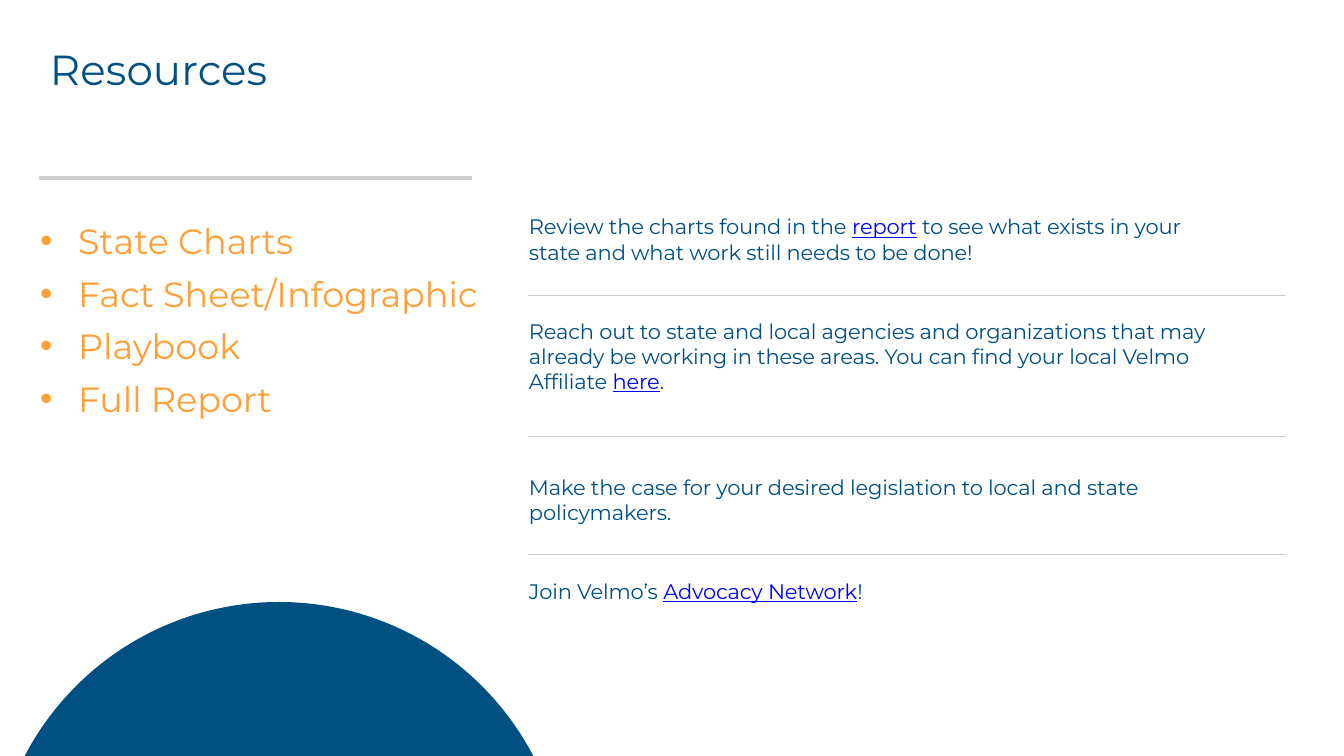
from dataclasses import dataclass
from math import acos, cos, sin

from lxml import etree
from pptx import Presentation
from pptx.dml.color import RGBColor
from pptx.enum.shapes import MSO_CONNECTOR
from pptx.enum.text import MSO_ANCHOR
from pptx.oxml.ns import qn
from pptx.util import Pt

STRAIGHT = MSO_CONNECTOR.STRAIGHT
TOP = MSO_ANCHOR.TOP

TITLE = "Resources"
MATERIALS = ["State Charts", "Fact Sheet/Infographic", "Playbook", "Full Report"]
ACTIONS = [
    (0, [("Review the charts found in the ", False), ("report", True),
         (" to see what exists in your state and what work still needs to be done!", False)]),
    (38.5, [("Reach out to state and local agencies and organizations that may already "
             "be working in these areas. You can find your local Velmo Affiliate ", False),
            ("here", True), (".", False)]),
    (57.5, [("Make the case for your desired legislation to local and state policymakers.", False)]),
    (38.5, [("Join Velmo’s ", False), ("Advocacy Network", True), ("!", False)]),
]
RULES = [(39, 178, 433, 2.25)] + [(528, y, 758, 0.5) for y in (295, 436, 554)]
DOME = {"center": 279, "top": 602, "radius": 287}
DOME_STEPS = 90
WIDTH, HEIGHT = 1344, 756
EMU_PER_PX = 914400 / 100.8


@dataclass(frozen=True)
class Theme:
    font: str = "Montserrat"
    navy: str = "005082"
    orange: str = "FF9F37"
    link: str = "0000FF"
    gray: str = "D0CECE"
    title: int = 30
    materials: int = 25
    body: int = 15


THEME = Theme()


def px(length):
    return round(length * EMU_PER_PX)


def color(value):
    return RGBColor.from_string(value)


def add_bullet(para, indent):
    properties = para._p.get_or_add_pPr()
    properties.set("marL", str(px(indent)))
    properties.set("indent", str(-px(indent - 1)))
    bullet_font = etree.SubElement(properties, qn("a:buFont"))
    bullet_font.set("typeface", "Arial")
    bullet = etree.SubElement(properties, qn("a:buChar"))
    bullet.set("char", "•")


def add_text(page, area, paragraphs, *, size, ink, leading=None, tracking=0, bullet_indent=0):
    box = page.shapes.add_textbox(*map(px, area))
    frame = box.text_frame
    frame.word_wrap = True
    frame.vertical_anchor = TOP
    frame.margin_left = frame.margin_right = frame.margin_top = frame.margin_bottom = 0
    for index, (gap, spans) in enumerate(paragraphs):
        para = frame.add_paragraph() if index else frame.paragraphs[0]
        if bullet_indent:
            add_bullet(para, bullet_indent)
        if gap:
            para.space_before = Pt(gap)
        if leading:
            para.line_spacing = Pt(leading)
        for text, linked in spans:
            span = para.add_run()
            span.text = text
            span.font.name = THEME.font
            span.font.size = Pt(size)
            span.font.color.rgb = color(THEME.link if linked else ink)
            span.font.underline = linked
            span._r.get_or_add_rPr().set("spc", str(tracking))


def add_rule(page, left, y, width, weight):
    rule = page.shapes.add_connector(STRAIGHT, px(left), px(y), px(left + width), px(y))
    rule.line.color.rgb = color(THEME.gray)
    rule.line.width = Pt(weight)
    etree.SubElement(rule._element.spPr, qn("a:effectLst"))


def add_dome(page, center, top, radius):
    reach = acos((top + radius - HEIGHT) / radius)
    angles = [reach * (2 * step / DOME_STEPS - 1) for step in range(DOME_STEPS + 1)]
    points = [(px(center + radius * sin(angle)), px(top + radius * (1 - cos(angle))))
              for angle in angles]
    builder = page.shapes.build_freeform(*points[0], scale=1.0)
    builder.add_line_segments(points[1:], close=True)
    dome = builder.convert_to_shape()
    dome.fill.solid()
    dome.fill.fore_color.rgb = color(THEME.navy)
    dome.line.fill.background()
    dome.shadow.inherit = False


def main():
    deck = Presentation()
    deck.slide_width, deck.slide_height = px(WIDTH), px(HEIGHT)
    page = deck.slides.add_slide(deck.slide_layouts[6])

    add_text(page, (50, 48, 462, 46), [(0, [(TITLE, False)])],
             size=THEME.title, ink=THEME.navy, leading=32.9, tracking=10)
    materials = [(1 if index else 0, [(name, False)]) for index, name in enumerate(MATERIALS)]
    add_text(page, (39, 210, 448, 209), materials,
             size=THEME.materials, ink=THEME.orange, leading=36.7, bullet_indent=39)
    add_text(page, (529, 214, 680, 460), ACTIONS,
             size=THEME.body, ink=THEME.navy, tracking=-10)
    for rule in RULES:
        add_rule(page, *rule)
    add_dome(page, **DOME)
    deck.save("out.pptx")


if __name__ == "__main__":
    main()
